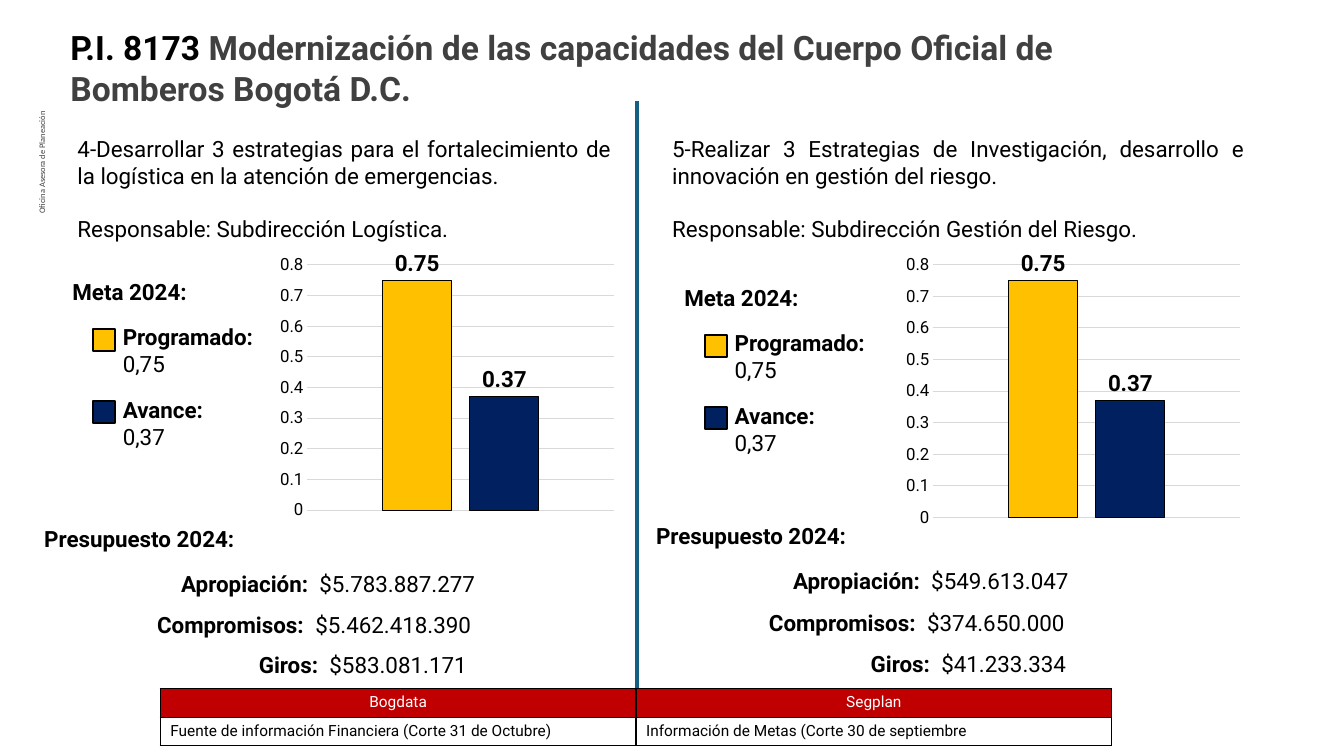
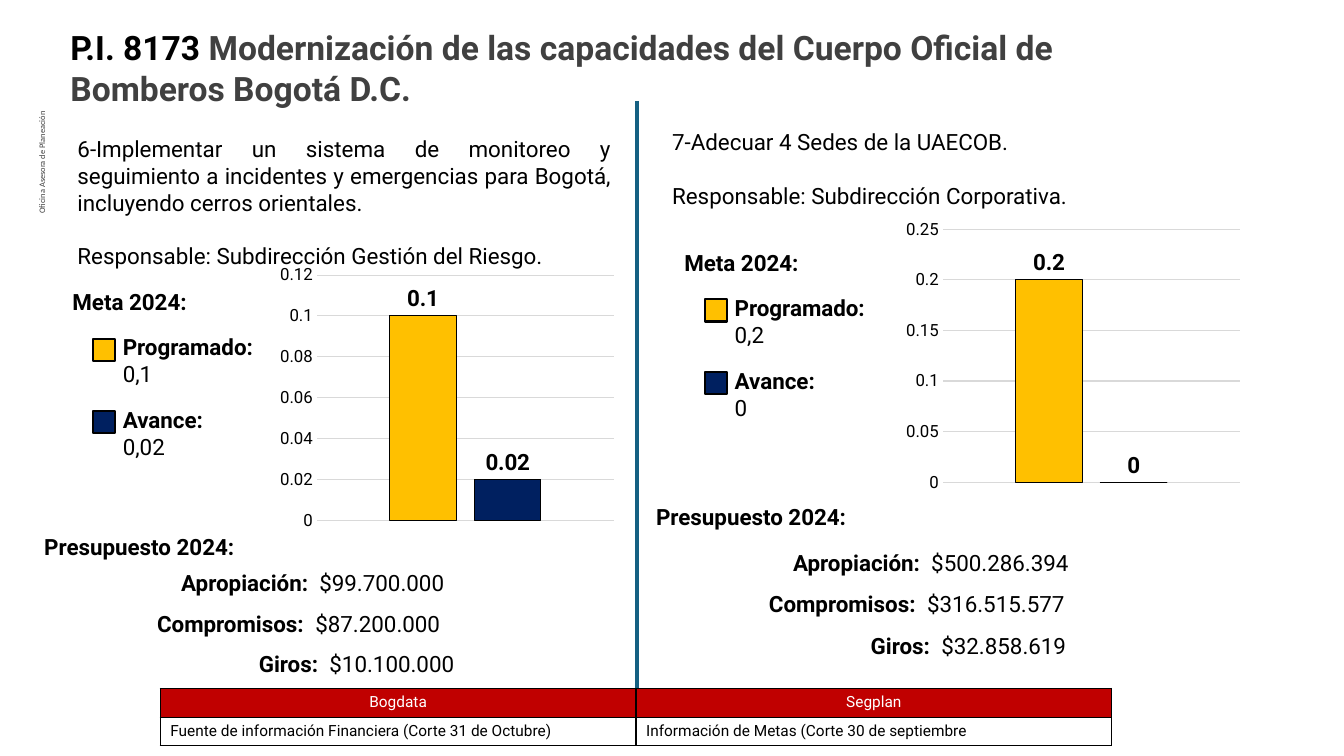
"""Build the goal and budget follow-up slides of project 8173."""
from dataclasses import dataclass
from typing import NamedTuple

from lxml.etree import SubElement
from pptx import Presentation
from pptx.chart.data import CategoryChartData
from pptx.dml.color import RGBColor
from pptx.enum.chart import XL_CHART_TYPE as ChartType
from pptx.enum.chart import XL_LABEL_POSITION as LabelPosition
from pptx.enum.chart import XL_TICK_MARK as TickMark
from pptx.enum.shapes import MSO_CONNECTOR as Connector
from pptx.enum.shapes import MSO_SHAPE as Preset
from pptx.enum.text import PP_ALIGN as Align
from pptx.oxml import parse_xml
from pptx.oxml.ns import nsdecls, qn
from pptx.util import Inches, Pt


@dataclass(frozen=True)
class Theme:
    font: str = "Roboto"
    side_font: str = "Calibri"
    black: str = "000000"
    white: str = "FFFFFF"
    gray: str = "404040"
    grid: str = "D9D9D9"
    divider: str = "156082"
    header: str = "C00000"
    planned: str = "FFC000"
    achieved: str = "002060"
    title_size: float = 24
    body_size: float = 16
    axis_size: float = 12
    table_size: float = 11
    side_size: float = 6


class Box(NamedTuple):
    """Columns and rows of a grid with ten cells per inch."""
    column: float
    row: float
    columns: float
    rows: float

    def lengths(self) -> list[int]:
        return [cells(value) for value in self]


class Words(NamedTuple):
    text: str
    bold: bool = False
    color: str = "000000"


class Side(NamedTuple):
    left: float
    goal_offset: float
    goal_columns: float
    chart_offset: float
    chart_rise: float
    chart_rows: float
    amount_pitch: float


class AmountRow(NamedTuple):
    label: str
    offset: float
    value_tab: float


class Goal(NamedTuple):
    side: Side
    text: str
    manager: str
    planned: str
    achieved: str
    amounts: tuple[str, str, str]
    goal_row: float
    goal_rows: float
    target_row: float
    budget_row: float
    amounts_row: float


THEME = Theme()
SLIDE_COLUMNS, SLIDE_ROWS = 133.33, 75
LINE_ROWS, PAIR_ROWS = 3.7, 6.4
DIVIDER_COLUMN = 63.2

LEFT = Side(3.4, 3.3, 54.9, 23.7, 2.35, 27.4, 4)
RIGHT = Side(64.1, 1.6, 58.7, 25.1, 3, 28.2, 4.1)

AMOUNT_ROWS = (
    AmountRow("Apropiación:", 13.6, 13.7),
    AmountRow("Compromisos:", 11.2, 15.7),
    AmountRow("Giros:", 21.3, 7),
)
SOURCES = (
    ("Bogdata", "Segplan"),
    ("Fuente de información Financiera (Corte 31 de Octubre)",
     "Información de Metas (Corte 30 de septiembre"),
)
SLIDES = (
    (
        Goal(LEFT, "4-Desarrollar 3 estrategias para el fortalecimiento de la "
             "logística en la atención de emergencias.",
             "Subdirección Logística.", "0,75", "0,37",
             ("$5.783.887.277", "$5.462.418.390", "$583.081.171"),
             12.9, 11.1, 27.1, 51.6, 56.1),
        Goal(RIGHT, "5-Realizar 3 Estrategias de Investigación, desarrollo e "
             "innovación en gestión del riesgo.",
             "Subdirección Gestión del Riesgo.", "0,75", "0,37",
             ("$549.613.047", "$374.650.000", "$41.233.334"),
             12.9, 11.1, 27.7, 51.3, 55.8),
    ),
    (
        Goal(LEFT, "6-Implementar un sistema de monitoreo y seguimiento a "
             "incidentes y emergencias para Bogotá, incluyendo cerros orientales.",
             "Subdirección Gestión del Riesgo.", "0,1", "0,02",
             ("$99.700.000", "$87.200.000", "$10.100.000"),
             12.9, 13.7, 28.1, 52.4, 56),
        Goal(RIGHT, "7-Adecuar 4 Sedes de la UAECOB.",
             "Subdirección Corporativa.", "0,2", "0",
             ("$500.286.394", "$316.515.577", "$32.858.619"),
             12.2, 8.4, 24.2, 49.4, 54),
    ),
)


def cells(count: float) -> int:
    return Inches(count / 10)


def rgb(color: str) -> RGBColor:
    return RGBColor.from_string(color)


def style_font(font, size: float, color: str = THEME.black,
               bold: bool = False, name: str = THEME.font) -> None:
    font.name, font.size, font.bold = name, Pt(size), bold
    font.color.rgb = rgb(color)


def add_text(slide, box: Box, *lines: list[Words], size: float = THEME.body_size,
             align: Align = Align.LEFT, name: str = THEME.font):
    shape = slide.shapes.add_textbox(*box.lengths())
    frame = shape.text_frame
    frame.word_wrap = True
    for index, line in enumerate(lines):
        paragraph = frame.add_paragraph() if index else frame.paragraphs[0]
        paragraph.alignment = align
        for words in line:
            run = paragraph.add_run()
            run.text = words.text
            style_font(run.font, size, words.color, words.bold, name)
    return shape


def add_heading(slide, text: str, column: float, row: float) -> None:
    add_text(slide, Box(column, row, 27.2, LINE_ROWS), [Words(text, True)])


def add_measure(slide, label: str, value: str, color: str,
                column: float, row: float) -> None:
    add_text(slide, Box(column + 2, row, 18.2, PAIR_ROWS),
             [Words(label, True)], [Words(value)])
    swatch = slide.shapes.add_shape(
        Preset.RECTANGLE, *Box(column, row + 1, 2.2, 2.2).lengths())
    swatch.shadow.inherit = False
    swatch.fill.solid()
    swatch.fill.fore_color.rgb = rgb(color)
    swatch.line.color.rgb = rgb(THEME.black)
    swatch.line.width = Pt(1.5)


def add_amount(slide, row_style: AmountRow, value: str,
               left: float, row: float) -> None:
    shape = add_text(slide, Box(left + row_style.offset, row, 38, LINE_ROWS),
                     [Words(row_style.label, True), Words("\t" + value)])
    properties = shape.text_frame.paragraphs[0]._p.get_or_add_pPr()
    tabs = SubElement(properties, qn("a:tabLst"))
    SubElement(tabs, qn("a:tab"), pos=str(cells(row_style.value_tab)), algn="l")


def add_goal_chart(slide, goal: Goal, box: Box) -> None:
    data = CategoryChartData()
    data.categories = ["1"]
    for name, value in (("Series 1", goal.planned), ("Series 2", goal.achieved)):
        data.add_series(name, [float(value.replace(",", "."))])
    chart = slide.shapes.add_chart(
        ChartType.COLUMN_CLUSTERED, *box.lengths(), data).chart
    chart.has_legend = chart.has_title = False
    style_font(chart.font, 10)
    chart.category_axis.visible = False
    axis = chart.value_axis
    axis.major_tick_mark = axis.minor_tick_mark = TickMark.NONE
    style_font(axis.tick_labels.font, THEME.axis_size)
    axis.format.line.fill.background()
    axis.major_gridlines.format.line.color.rgb = rgb(THEME.grid)
    axis.major_gridlines.format.line.width = Pt(0.75)
    plot = chart.plots[0]
    plot.gap_width, plot.overlap, plot.vary_by_categories = 219, -27, False
    for series, color in zip(plot.series, (THEME.planned, THEME.achieved)):
        series.format.fill.solid()
        series.format.fill.fore_color.rgb = rgb(color)
        series.format.line.color.rgb = rgb(THEME.black)
        series.format.line.width = Pt(0.75)
        labels = series.data_labels
        labels.show_value, labels.position = True, LabelPosition.OUTSIDE_END
        style_font(labels.font, THEME.body_size, bold=True)


def add_goal(slide, goal: Goal) -> None:
    side = goal.side
    left = side.left
    statement = add_text(
        slide,
        Box(left + side.goal_offset, goal.goal_row, side.goal_columns, goal.goal_rows),
        [Words(goal.text)], [Words("Responsable: " + goal.manager)],
        align=Align.JUSTIFY)
    statement.text_frame.paragraphs[1].line_spacing = 2.0
    add_heading(slide, "Meta 2024:", left + 2.8, goal.target_row)
    add_measure(slide, "Programado:", goal.planned, THEME.planned,
                left + 5.8, goal.target_row + 4.5)
    add_measure(slide, "Avance:", goal.achieved, THEME.achieved,
                left + 5.8, goal.target_row + 11.7)
    add_goal_chart(slide, goal, Box(left + side.chart_offset,
                                    goal.target_row - side.chart_rise,
                                    34.5, side.chart_rows))
    add_heading(slide, "Presupuesto 2024:", left, goal.budget_row)
    for index, (row_style, value) in enumerate(zip(AMOUNT_ROWS, goal.amounts)):
        add_amount(slide, row_style, value, left,
                   goal.amounts_row + index * side.amount_pitch)


def add_divider(slide) -> None:
    line = slide.shapes.add_connector(
        Connector.STRAIGHT, cells(DIVIDER_COLUMN), cells(10),
        cells(DIVIDER_COLUMN), cells(69.3))
    line.line.color.rgb = rgb(THEME.divider)
    line.line.width = Pt(2.25)
    SubElement(line._element.spPr, qn("a:effectLst"))


def add_borders(cell) -> None:
    properties = cell._tc.get_or_add_tcPr()
    for index, edge in enumerate(("lnL", "lnR", "lnT", "lnB")):
        properties.insert(index, parse_xml(
            f'<a:{edge} {nsdecls("a")} w="{Pt(1)}"><a:solidFill>'
            f'<a:srgbClr val="{THEME.black}"/></a:solidFill></a:{edge}>'))


def add_sources(slide) -> None:
    table = slide.shapes.add_table(
        2, 2, *Box(15.9, 68.3, 94.4, 5.7).lengths()).table
    table.first_row = table.horz_banding = False
    for row, texts in enumerate(SOURCES):
        is_header = row == 0
        for column, text in enumerate(texts):
            cell = table.cell(row, column)
            cell.text_frame.text = text
            cell.fill.solid()
            cell.fill.fore_color.rgb = rgb(THEME.header if is_header else THEME.white)
            paragraph = cell.text_frame.paragraphs[0]
            paragraph.alignment = Align.CENTER if is_header else Align.LEFT
            style_font(paragraph.runs[0].font, THEME.table_size,
                       THEME.white if is_header else THEME.black)
            add_borders(cell)


def add_frame(slide) -> None:
    add_text(slide, Box(6, 2.2, 103, 9.1),
             [Words("P.I. 8173 ", True),
              Words("Modernización de las capacidades del Cuerpo Oficial de "
                    "Bomberos Bogotá D.C.", True, THEME.gray)],
             size=THEME.title_size)
    office = add_text(slide, Box(-8.8, 22.4, 25.9, 1.8),
                      [Words("Oficina Asesora de Planeación", color=THEME.gray)],
                      size=THEME.side_size, align=Align.RIGHT, name=THEME.side_font)
    office.rotation = 270
    frame = office.text_frame
    frame.margin_left = frame.margin_right = cells(0.7)
    frame.margin_top = frame.margin_bottom = cells(0.4)


def main() -> None:
    presentation = Presentation()
    presentation.slide_width = cells(SLIDE_COLUMNS)
    presentation.slide_height = cells(SLIDE_ROWS)
    for goals in SLIDES:
        slide = presentation.slides.add_slide(presentation.slide_layouts[6])
        add_frame(slide)
        for goal in goals:
            add_goal(slide, goal)
        add_divider(slide)
        add_sources(slide)
    presentation.save("out.pptx")


if __name__ == "__main__":
    main()
